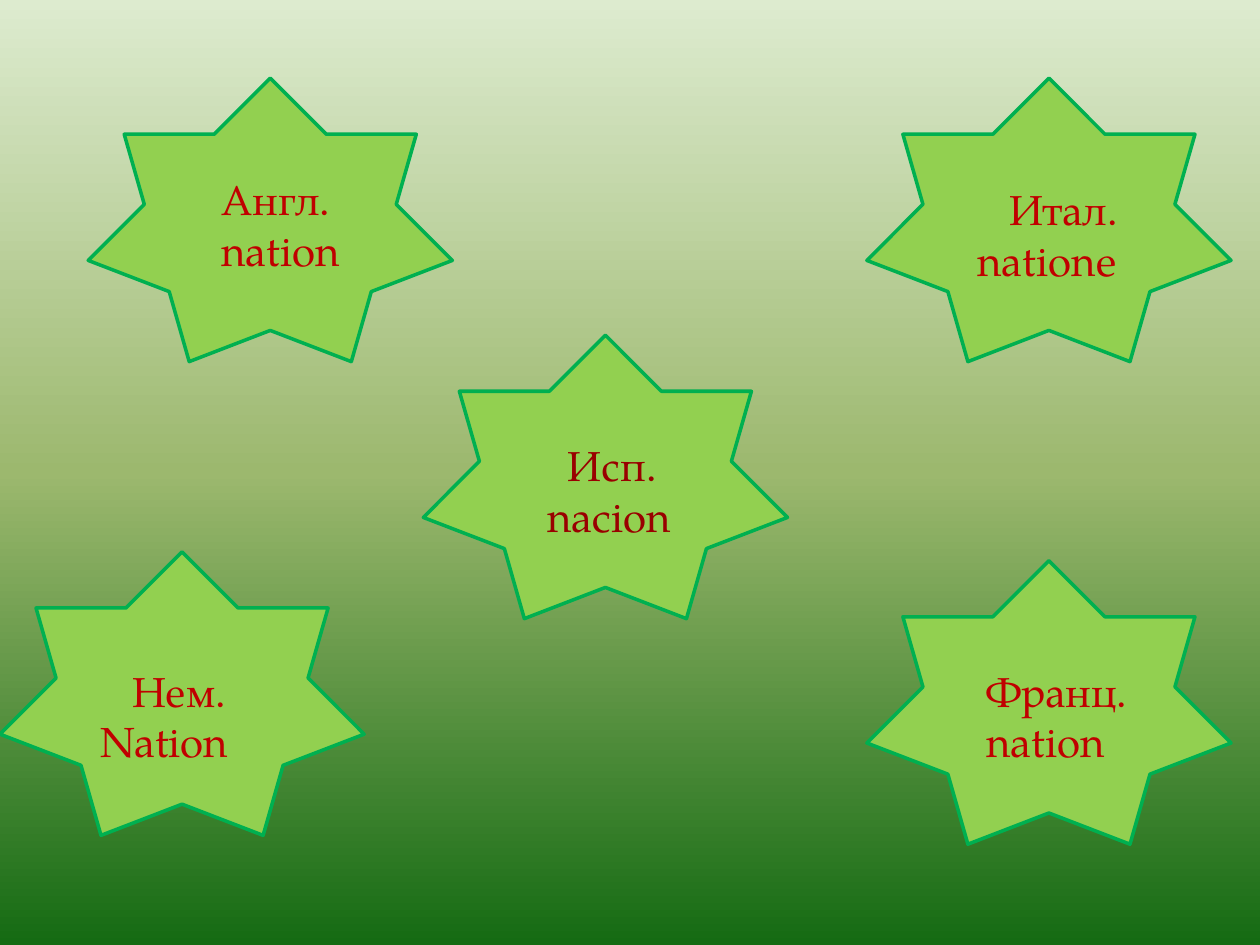
from copy import deepcopy

from pptx import Presentation
from pptx.dml.color import RGBColor
from pptx.enum.shapes import MSO_SHAPE
from pptx.enum.text import MSO_AUTO_SIZE
from pptx.util import Inches, Pt

COLORS = {
    "star": "92D050",
    "outline": "00B050",
    "red": "C00000",
    "dark red": "990000",
}
BACKGROUND = [(0, "DDEBCF"), (0.5, "9CB86E"), (1, "156B13")]
FONT = "TeX Gyre Pagella"
STAR_WIDTH, STAR_HEIGHT = 2.89, 2.25
LABEL_HEIGHT = 0.91
SPACE = 0.25 * 24 / 72  # width of one space at 24 pt, the unit of indents
LEFT, RIGHT, TOP = 0.7, 6.88, 0.62

# star corner, label (left, top, width), lines as (text, indent), colour
WORDS = [
    ((3.36, 2.66), (3.91, 3.44, 1.8), [("Исп.", 6), ("nacion", 4)], "dark red"),
    ((LEFT, TOP), (1.41, 1.33, 1.48), [("Англ.", 3), ("nation", 3)], "red"),
    ((RIGHT, TOP), (7.66, 1.41, 1.41), [("Итал.", 3), ("natione", 0)], "red"),
    ((0, 4.38), (0.7, 5.23, 1.33), [("Нем.", 3), ("Nation", 0)], "red"),
    ((RIGHT, 4.45), (7.73, 5.23, 1.41), [("Франц.", 0), ("nation", 0)], "red"),
]


def rgb(name):
    return RGBColor.from_string(COLORS[name])


def paint_background(slide):
    fill = slide.background.fill
    fill.gradient()
    fill.gradient_angle = 270
    first = slide.element.xpath(".//p:bg//a:gs")[0]
    first.addnext(deepcopy(first))
    for stop, (position, color) in zip(fill.gradient_stops, BACKGROUND):
        stop.position = position
        stop.color.rgb = RGBColor.from_string(color)


def add_star(group, left, top):
    star = group.shapes.add_shape(
        MSO_SHAPE.STAR_7_POINT,
        *map(Inches, (left, top, STAR_WIDTH, STAR_HEIGHT)))
    star.shadow.inherit = False
    star.fill.solid()
    star.fill.fore_color.rgb = rgb("star")
    star.line.color.rgb = rgb("outline")
    star.line.width = Pt(2)


def add_label(group, lines, *, left, top, width, color, size=24):
    label = group.shapes.add_textbox(
        *map(Inches, (left, top, width, LABEL_HEIGHT)))
    frame = label.text_frame
    frame.word_wrap = True
    frame.auto_size = MSO_AUTO_SIZE.SHAPE_TO_FIT_TEXT
    for number, (text, indent) in enumerate(lines):
        paragraph = frame.add_paragraph() if number else frame.paragraphs[0]
        properties = paragraph._p.get_or_add_pPr()
        properties.set("marL", str(Inches(indent * SPACE)))
        run = paragraph.add_run()
        run.text = text
        run.font.name = FONT
        run.font.size = Pt(size)
        run.font.color.rgb = rgb(color)


def main():
    presentation = Presentation()
    presentation.slide_width = Inches(10)
    presentation.slide_height = Inches(7.5)
    slide = presentation.slides.add_slide(presentation.slide_layouts[6])
    paint_background(slide)
    for corner, (left, top, width), lines, color in WORDS:
        group = slide.shapes.add_group_shape()
        add_star(group, *corner)
        add_label(group, lines, left=left, top=top, width=width, color=color)
    presentation.save("out.pptx")


if __name__ == "__main__":
    main()
